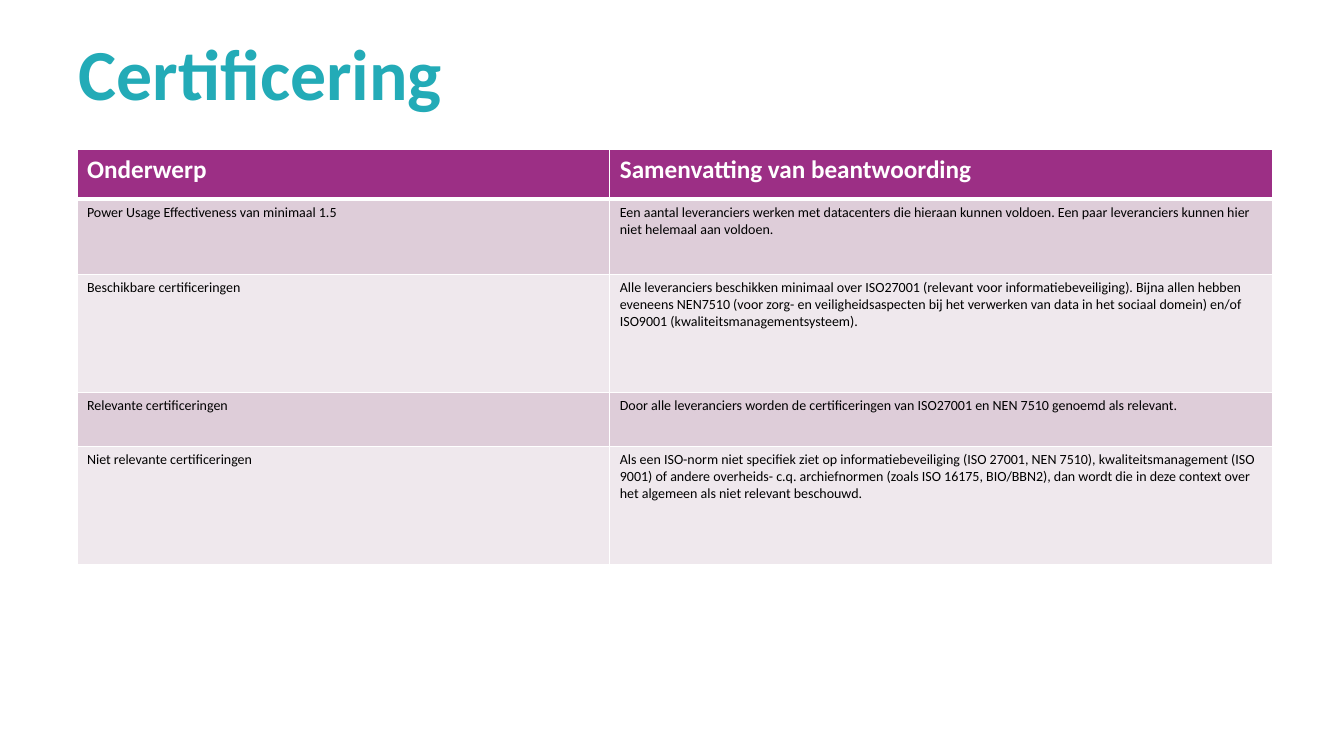
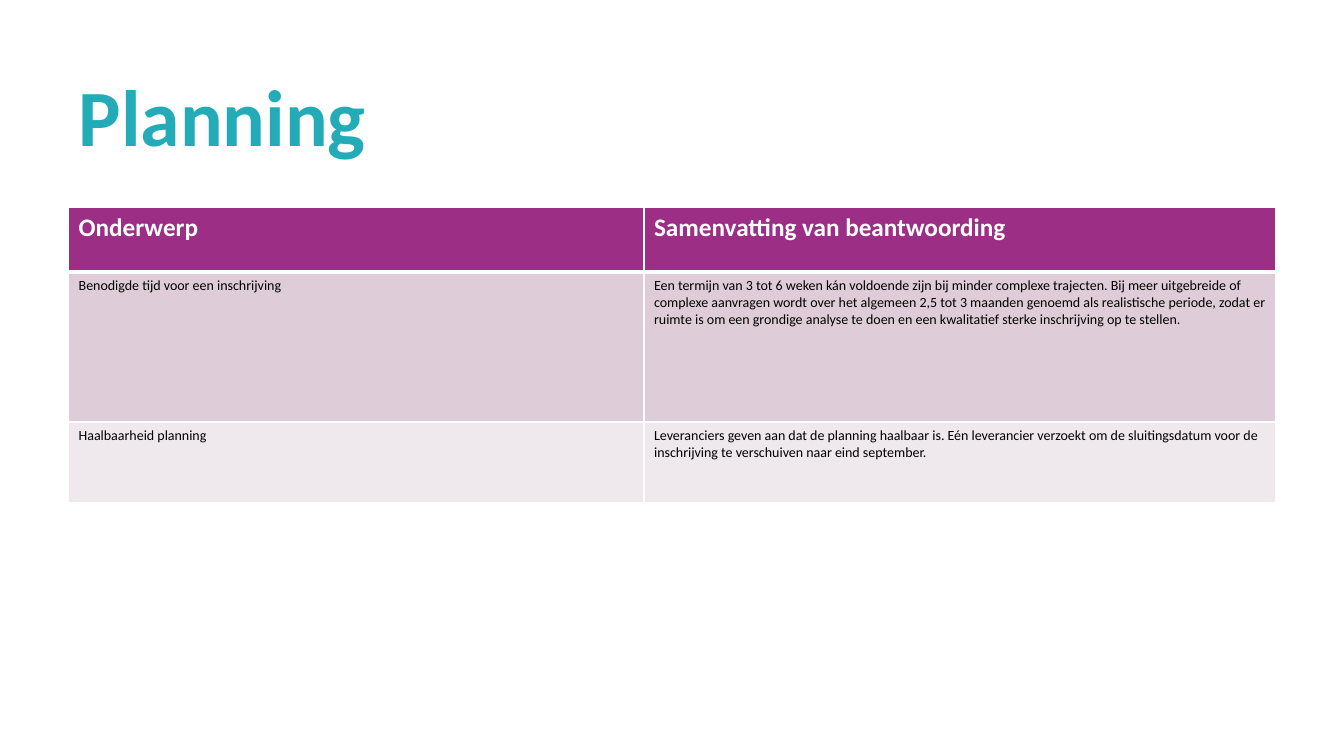
from lxml import etree
from pptx import Presentation
from pptx.dml.color import RGBColor
from pptx.enum import text
from pptx.oxml import ns
from pptx.util import Pt

COLOURS = {
    "title": "23ABB7",
    "header": "9C2F85",
    "odd": "DECDD9",
    "even": "EFE8ED",
    "white": "FFFFFF",
    "black": "000000",
}
FONT = "Calibri"
TITLE_ONLY = 5
HEADINGS = ("Onderwerp", "Samenvatting van beantwoording")


def colour(name):
    return RGBColor.from_string(COLOURS[name])


def set_borders(cell, widths):
    """Draw white cell borders; widths maps a side (L, R, T, B) to points."""
    properties = cell._tc.get_or_add_tcPr()
    for side, width in widths.items():
        line = etree.SubElement(properties, ns.qn(f"a:ln{side}"), w=str(Pt(width)))
        fill = etree.SubElement(line, ns.qn("a:solidFill"))
        etree.SubElement(fill, ns.qn("a:srgbClr"), val=COLOURS["white"])


class SummaryDeck:
    def __init__(self):
        self.deck = Presentation()
        self.deck.slide_width = Pt(960)
        self.deck.slide_height = Pt(540)
        self.page = None

    def add_page(self):
        layout = self.deck.slide_layouts[TITLE_ONLY]
        self.page = self.deck.slides.add_slide(layout)

    def style(self, para, size, ink, bold):
        para.alignment = text.PP_ALIGN.LEFT
        para.font.name = FONT
        para.font.size = Pt(size)
        para.font.bold = bold
        para.font.color.rgb = colour(ink)

    def add_title(self, wording, top, size):
        box = self.page.shapes.title
        box.left, box.top, box.width, box.height = Pt(49), Pt(top), Pt(862), Pt(75.6)
        frame = box.text_frame
        frame.text = wording
        frame.word_wrap = True
        frame.auto_size = text.MSO_AUTO_SIZE.NONE
        frame.vertical_anchor = text.MSO_ANCHOR.MIDDLE
        para = frame.paragraphs[0]
        para.line_spacing = 0.9
        self.style(para, size, "title", True)

    def add_summary(self, left, top, widths, heights, answers):
        """Add a table with the shared headings above (subject, answer) rows."""
        rows = [HEADINGS, *answers]
        table = self.page.shapes.add_table(
            len(rows), len(HEADINGS), Pt(left), Pt(top),
            Pt(sum(widths)), Pt(sum(heights))).table
        table.horz_banding = False
        for column, width in zip(table.columns, widths):
            column.width = Pt(width)
        for index, (row, height, wordings) in enumerate(zip(table.rows, heights, rows)):
            row.height = Pt(height)
            for cell, wording in zip(row.cells, wordings):
                self.fill_cell(cell, wording, index)

    def fill_cell(self, cell, wording, row):
        is_header = row == 0
        set_borders(cell, {"L": 1, "R": 1, "T": 3 if row == 1 else 1,
                           "B": 3 if is_header else 1})
        band = "header" if is_header else "odd" if row % 2 else "even"
        cell.fill.solid()
        cell.fill.fore_color.rgb = colour(band)
        cell.text = wording
        size, ink = (18, "white") if is_header else (10, "black")
        self.style(cell.text_frame.paragraphs[0], size, ink, is_header)

    def save(self):
        self.deck.save("out.pptx")


def main():
    summary = SummaryDeck()

    summary.add_page()
    summary.add_title("Certificering", top=17, size=51.3)
    summary.add_summary(
        left=55, top=106.6, widths=(380.6, 473.6), heights=(35.5, 54, 84, 39, 84.4),
        answers=[
            ("Power Usage Effectiveness van minimaal 1.5",
             "Een aantal leveranciers werken met datacenters die hieraan kunnen "
             "voldoen. Een paar leveranciers kunnen hier niet helemaal aan voldoen."),
            ("Beschikbare certificeringen",
             "Alle leveranciers beschikken minimaal over ISO27001 (relevant voor "
             "informatiebeveiliging). Bijna allen hebben eveneens NEN7510 (voor zorg- "
             "en veiligheidsaspecten bij het verwerken van data in het sociaal domein) "
             "en/of ISO9001 (kwaliteitsmanagementsysteem)."),
            ("Relevante certificeringen",
             "Door alle leveranciers worden de certificeringen van ISO27001 en "
             "NEN 7510 genoemd als relevant."),
            ("Niet relevante certificeringen",
             "Als een ISO-norm niet specifiek ziet op informatiebeveiliging (ISO 27001, "
             "NEN 7510), kwaliteitsmanagement (ISO 9001) of andere overheids- c.q. "
             "archiefnormen (zoals ISO 16175, BIO/BBN2), dan wordt die in deze context "
             "over het algemeen als niet relevant beschouwd."),
        ])

    summary.add_page()
    summary.add_title("Planning", top=48.2, size=57)
    summary.add_summary(
        left=49, top=148.3, widths=(411, 450.8), heights=(46, 107.2, 57.6),
        answers=[
            ("Benodigde tijd voor een inschrijving",
             "Een termijn van 3 tot 6 weken kán voldoende zijn bij minder complexe "
             "trajecten. Bij meer uitgebreide of complexe aanvragen wordt over het "
             "algemeen 2,5 tot 3 maanden genoemd als realistische periode, zodat er "
             "ruimte is om een grondige analyse te doen en een kwalitatief sterke "
             "inschrijving op te stellen."),
            ("Haalbaarheid planning",
             "Leveranciers geven aan dat de planning haalbaar is. Eén leverancier "
             "verzoekt om de sluitingsdatum voor de inschrijving te verschuiven naar "
             "eind september."),
        ])

    summary.save()


if __name__ == "__main__":
    main()
